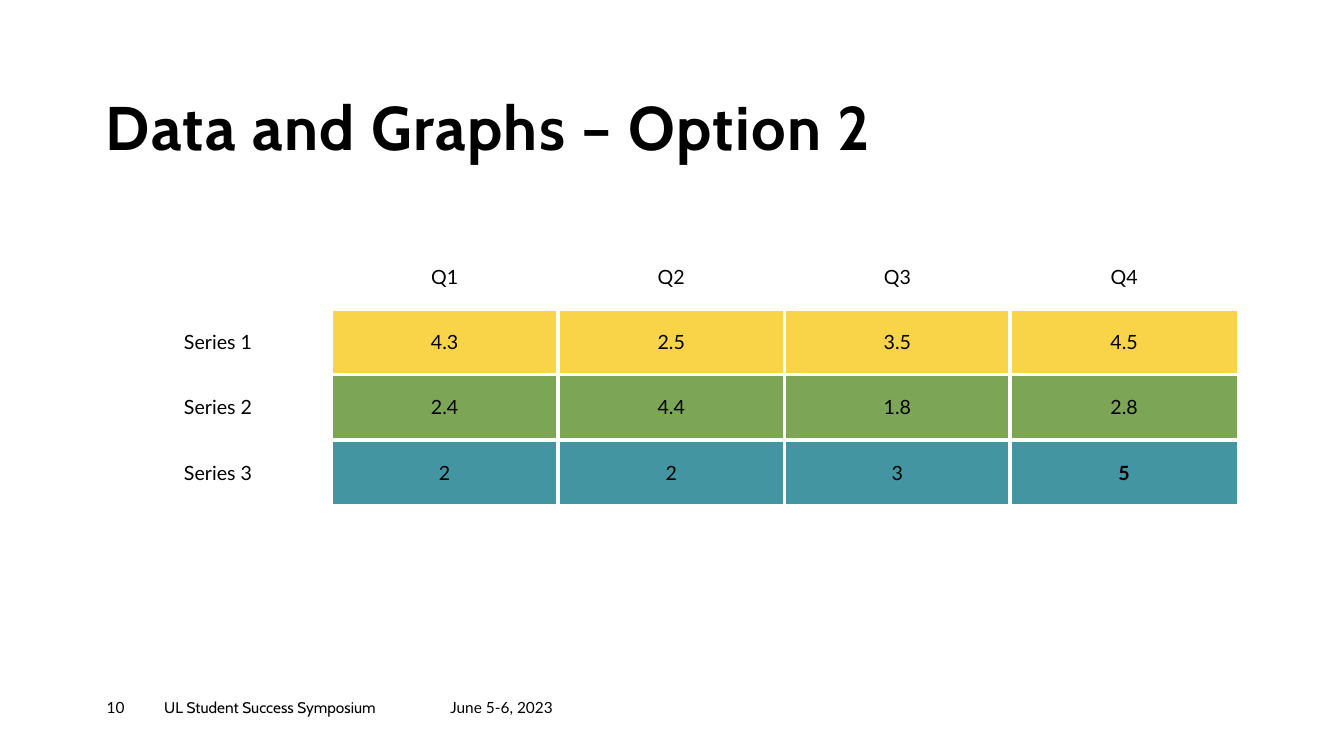
"""Build the quarterly data table slide."""
from lxml.etree import SubElement
from pptx import Presentation
from pptx.dml.color import RGBColor
from pptx.enum.text import MSO_ANCHOR, PP_ALIGN
from pptx.oxml.ns import qn
from pptx.util import Cm, Pt

COLORS = {"black": "000000", "white": "FFFFFF", "gold": "F9D448",
          "green": "7CA655", "teal": "4495A2"}


def write(frame, text, name, size, bold=False):
    para = frame.paragraphs[0]
    run = para.add_run()
    run.text = text
    style = {"name": name, "size": Pt(size), "bold": bold}
    for key, value in style.items():
        setattr(run.font, key, value)
    run.font.color.rgb = RGBColor.from_string(COLORS["black"])
    return para


def edge(cell, side, width):
    line = SubElement(cell._tc.get_or_add_tcPr(), qn("a:ln" + side), w=str(Pt(width)))
    fill = SubElement(line, qn("a:solidFill"))
    SubElement(fill, qn("a:srgbClr"), val=COLORS["white"])


deck = Presentation()
deck.slide_width, deck.slide_height = Cm(33.87), Cm(19.05)
slide = deck.slides.add_slide(deck.slide_layouts[6])

labels = [
    ("Data and Graphs – Option 2", "Cabin", 44, True, (2.67, 2.44, 21, 1.7)),
    ("10", "Lato", 11, False, (2.69, 17.58, 1.45, 0.69)),
    ("UL Student Success Symposium", "Cabin", 11, False, (4.14, 17.58, 6.68, 0.71)),
    ("June 5-6, 2023", "Lato", 11, False, (11.35, 17.6, 3.66, 0.69)),
]
for text, name, size, bold, place in labels:
    frame = slide.shapes.add_textbox(*map(Cm, place)).text_frame
    layout = {"word_wrap": True, "margin_left": 0, "margin_right": 0,
              "margin_top": 0, "margin_bottom": 0,
              "vertical_anchor": MSO_ANCHOR.BOTTOM if bold else MSO_ANCHOR.TOP}
    for key, value in layout.items():
        setattr(frame, key, value)
    para = write(frame, text, name, size, bold)
    if bold:
        para.line_spacing = 0.9
        para.runs[0].font._element.set("spc", "100")

rows = [
    (None, ["", "Q1", "Q2", "Q3", "Q4"]),
    ("gold", ["Series 1", "4.3", "2.5", "3.5", "4.5"]),
    ("green", ["Series 2", "2.4", "4.4", "1.8", "2.8"]),
    ("teal", ["Series 3", "2", "2", "3", "5"]),
]
table = slide.shapes.add_table(4, 5, Cm(2.64), Cm(6.15), Cm(28.56), Cm(6.58)).table
for key in ("first_row", "horz_banding"):
    setattr(table, key, False)
for col, width in zip(table.columns, (5.71, 5.71, 5.71, 5.69, 5.74)):
    col.width = Cm(width)

for r, (color, texts) in enumerate(rows):
    table.rows[r].height = Cm(1.645)
    for c, text in enumerate(texts):
        cell = table.cell(r, c)
        cell.vertical_anchor = MSO_ANCHOR.MIDDLE
        inner = {"L": c > 1, "R": 0 < c < 4, "T": c and r > 1, "B": c and r < 3}
        for side, thick in inner.items():
            if r == 0:
                width = 2.25 if side == "B" else 1
            else:
                width = 3 if thick else 2.25
            edge(cell, side, width)
        if color and c:
            cell.fill.solid()
            cell.fill.fore_color.rgb = RGBColor.from_string(COLORS[color])
        else:
            cell.fill.background()
        if text:
            last = (r, c) == (3, 4)
            para = write(cell.text_frame, text, "Lato", 14, last)
            para.alignment = PP_ALIGN.CENTER

deck.save("out.pptx")
